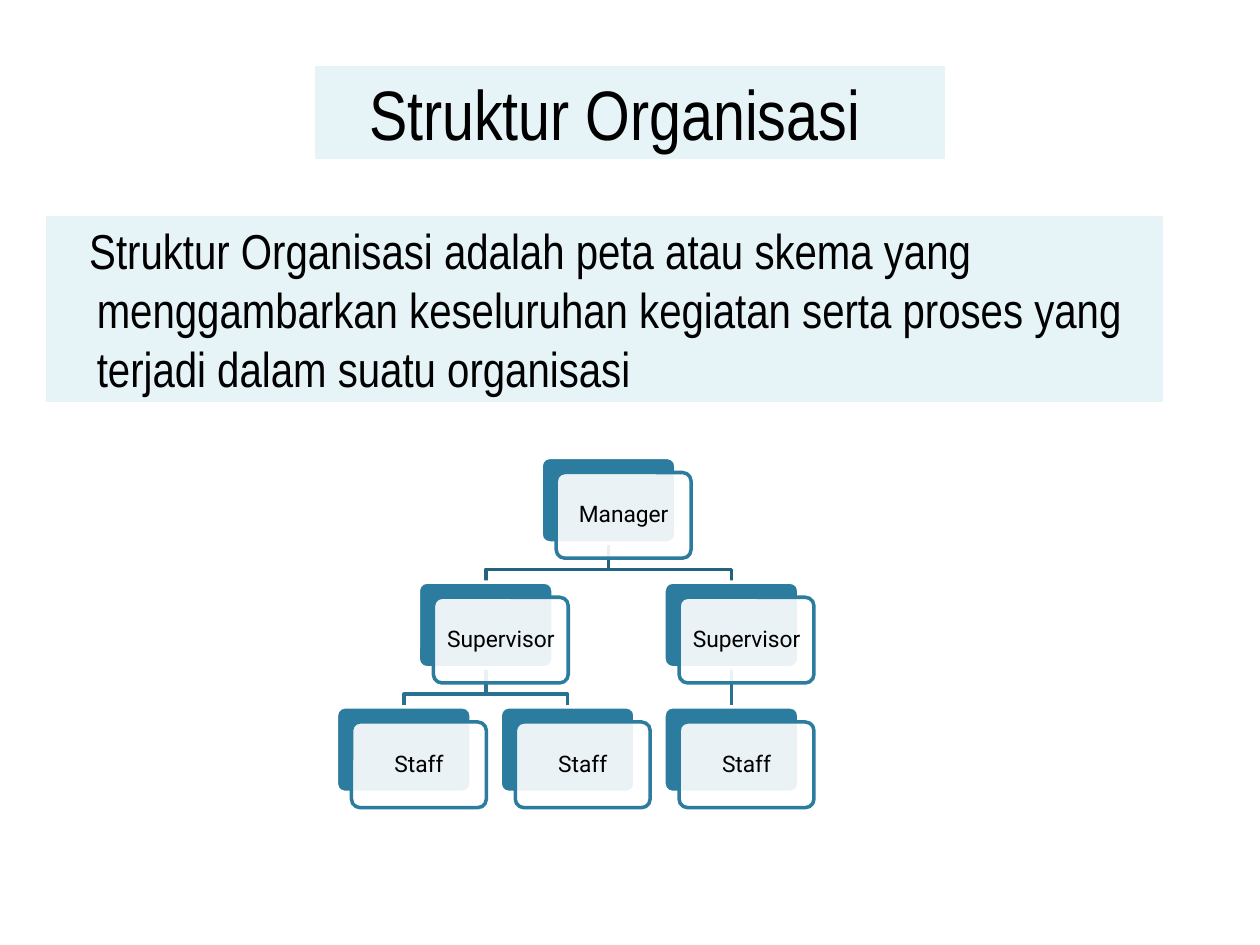
"""Build the "Struktur Organisasi" slide with its definition and organisation chart."""
import lxml.etree
import pptx
import pptx.dml.color
import pptx.enum.shapes
import pptx.enum.text
import pptx.oxml.ns
import pptx.util
from pptx.util import Inches

PALE = pptx.dml.color.RGBColor(0xE6, 0xF4, 0xF8)
WHITE = pptx.dml.color.RGBColor(0xFF, 0xFF, 0xFF)
BLACK = pptx.dml.color.RGBColor(0x00, 0x00, 0x00)
TEAL = pptx.dml.color.RGBColor(0x2C, 0x7C, 0x9F)
UPPER_LINK = pptx.dml.color.RGBColor(0x23, 0x63, 0x7F)
LOWER_LINK = pptx.dml.color.RGBColor(0x28, 0x71, 0x90)
ALIGN = pptx.enum.text.PP_ALIGN
ANCHOR = pptx.enum.text.MSO_ANCHOR
PRESET = pptx.enum.shapes.MSO_SHAPE
qn = pptx.oxml.ns.qn


def write(shape, text, font, size, align=ALIGN.LEFT, anchor=ANCHOR.TOP,
          inset=None, spacing=None, margin=0, indent=0):
    frame = shape.text_frame
    frame.word_wrap = True
    frame.auto_size = pptx.enum.text.MSO_AUTO_SIZE.NONE
    frame.vertical_anchor = anchor
    if inset is not None:
        frame.margin_left = frame.margin_right = Inches(inset)
        frame.margin_top = frame.margin_bottom = Inches(inset)
    paragraph = frame.paragraphs[0]
    paragraph.alignment = align
    paragraph.line_spacing = spacing
    properties = paragraph._p.get_or_add_pPr()
    properties.set("marL", str(Inches(margin)))
    properties.set("indent", str(Inches(indent)))
    run = paragraph.add_run()
    run.text = text
    run.font.name = font
    run.font.size = pptx.util.Pt(size)
    run.font.color.rgb = BLACK


def paint(shape, fill, line, width):
    shape.fill.solid()
    shape.fill.fore_color.rgb = fill
    shape.line.color.rgb = line
    shape.line.width = pptx.util.Pt(width)


deck = pptx.Presentation()
deck.slide_width, deck.slide_height = Inches(10), Inches(7.5)
slide = deck.slides.add_slide(deck.slide_layouts[5])
shapes = slide.shapes

title = shapes.title
title.left, title.top = Inches(2.48), Inches(0.51)
title.width, title.height = Inches(5.04), Inches(0.77)
paint(title, PALE, WHITE, 2.5)
write(title, "Struktur Organisasi", "Arial Narrow", 40, margin=0.35)

definition = shapes.add_shape(
    PRESET.RECTANGLE, Inches(0.35), Inches(1.7), Inches(8.9), Inches(1.51))
definition.shadow.inherit = False
paint(definition, PALE, WHITE, 2.5)
write(definition,
      "Struktur Organisasi adalah peta atau skema yang menggambarkan keseluruhan "
      "kegiatan serta proses yang terjadi dalam suatu organisasi",
      "Arial Narrow", 28, margin=0.32, indent=-0.06)

CARD_WIDTH, CARD_HEIGHT = 1.07, 0.68
CHART_LEFT, CHART_TOP = 2.67, 3.63
COLUMN_STEP, ROW_STEP = 1.3, 0.99
OFFSET = 0.12
BEND = 0.21

positions = [
    ("Manager", 1.25, 0), ("Supervisor", 0.5, 1), ("Staff", 0, 2),
    ("Staff", 1, 2), ("Supervisor", 2, 1), ("Staff", 2, 2),
]
branches = [(1.25, 2, 0, UPPER_LINK), (0.5, 1, 1, LOWER_LINK),
            (0.5, 0, 1, LOWER_LINK), (1.25, 0.5, 0, UPPER_LINK)]

staff_link = shapes.add_connector(pptx.enum.shapes.MSO_CONNECTOR.STRAIGHT, 0, 0, 0, 0)
staff_link.line.color.rgb = LOWER_LINK
staff_link.line.width = pptx.util.Pt(2)
lxml.etree.SubElement(staff_link._element.spPr, qn("a:effectLst"))

for parent, child, row, color in branches:
    start_x, end_x = (Inches(CHART_LEFT + column * COLUMN_STEP + CARD_WIDTH / 2)
                      for column in (parent, child))
    row_top = CHART_TOP + row * ROW_STEP
    start_y = Inches(row_top + CARD_HEIGHT)
    bend_y = Inches(row_top + CARD_HEIGHT + BEND)
    end_y = Inches(row_top + ROW_STEP)
    outline = shapes.build_freeform(start_x, start_y)
    outline.add_line_segments(
        [(start_x, bend_y), (end_x, bend_y), (end_x, end_y)], close=False)
    branch = outline.convert_to_shape()
    branch.shadow.inherit = False
    branch.fill.background()
    branch.line.color.rgb = color
    branch.line.width = pptx.util.Pt(2)

backings = {}
for role, column, row in positions:
    left = CHART_LEFT + column * COLUMN_STEP
    top = CHART_TOP + row * ROW_STEP
    for shift, fill, line in ((0, TEAL, WHITE), (OFFSET, WHITE, TEAL)):
        card = shapes.add_shape(
            PRESET.ROUNDED_RECTANGLE, Inches(left + shift), Inches(top + shift),
            Inches(CARD_WIDTH), Inches(CARD_HEIGHT))
        card.adjustments[0] = 0.1
        card.shadow.inherit = False
        paint(card, fill, line, 2)
        backings.setdefault((column, row), card)
    card_color = card._element.spPr.find(qn("a:solidFill"))[0]
    lxml.etree.SubElement(card_color, qn("a:alpha"), val="90000")
    write(card, role, "Roboto", 13, align=ALIGN.CENTER, anchor=ANCHOR.MIDDLE,
          inset=0.05, spacing=0.9)

staff_link.begin_connect(backings[2, 1], 2)
staff_link.end_connect(backings[2, 2], 0)

deck.save("out.pptx")
